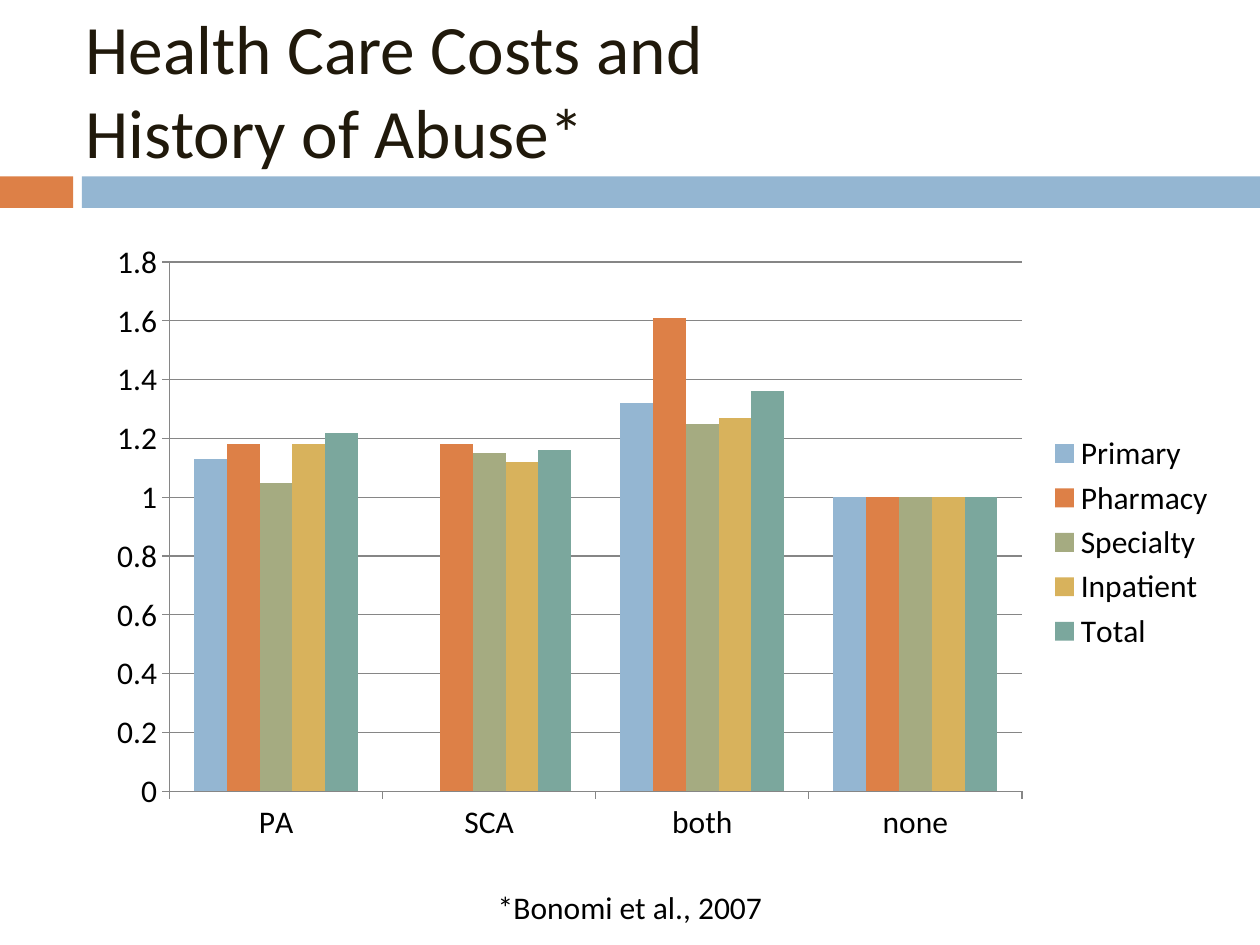
from pptx import Presentation
from pptx.chart.data import CategoryChartData
from pptx.dml.color import RGBColor
from pptx.enum.chart import XL_CHART_TYPE, XL_LEGEND_POSITION, XL_TICK_MARK
from pptx.enum.shapes import MSO_SHAPE
from pptx.enum.text import MSO_ANCHOR, PP_ALIGN
from pptx.util import Inches, Pt

COLUMN = XL_CHART_TYPE.COLUMN_CLUSTERED
RIGHT = XL_LEGEND_POSITION.RIGHT
OUT = XL_TICK_MARK.OUTSIDE
RECT = MSO_SHAPE.RECTANGLE
MIDDLE = MSO_ANCHOR.MIDDLE
CENTER = PP_ALIGN.CENTER

FONT = "Calibri"
BLUE, ORANGE, GRAY = "94B6D2", "DD8047", "868686"
GROUPS = ["PA", "SCA", "both", "none"]
COSTS = [
    ("Primary", BLUE, [1.13, None, 1.32, 1]),
    ("Pharmacy", ORANGE, [1.18, 1.18, 1.61, 1]),
    ("Specialty", "A5AB81", [1.05, 1.15, 1.25, 1]),
    ("Inpatient", "D8B25C", [1.18, 1.12, 1.27, 1]),
    ("Total", "7BA79D", [1.22, 1.16, 1.36, 1]),
]


def color(code):
    return RGBColor.from_string(code)


def box(*sides):
    return [Inches(side) for side in sides]


def apply(item, values):
    for name, value in values.items():
        setattr(item, name, value)


def style(font, size, code):
    apply(font, {"name": FONT, "size": Pt(size)})
    font.color.rgb = color(code)


def paint(item, code):
    item.fill.solid()
    item.fill.fore_color.rgb = color(code)


def add_bar(slide, left, width, code):
    bar = slide.shapes.add_shape(RECT, *box(left, 1.4, width, 0.25))
    bar.shadow.inherit = False
    paint(bar, code)
    bar.line.fill.background()


def set_title(slide, text):
    title = slide.shapes.title
    left, top, width, height = box(0.58, 0.08, 9.42, 1.25)
    apply(title, {"left": left, "top": top, "width": width, "height": height})
    frame = title.text_frame
    apply(frame, {"text": text, "vertical_anchor": MIDDLE, "word_wrap": True})
    line = frame.paragraphs[0]
    line.alignment = PP_ALIGN.LEFT
    for run in line.runs:
        style(run.font, 39.6, "20190B")


def add_costs(slide):
    data = CategoryChartData()
    data.categories = GROUPS
    for name, _, values in COSTS:
        data.add_series(name, values)
    chart = slide.shapes.add_chart(COLUMN, *box(0.75, 1.83, 9, 4.95), data).chart
    style(chart.font, 18, "000000")
    apply(chart, {"has_title": False, "has_legend": True})
    apply(chart.legend, {"position": RIGHT, "include_in_layout": False})

    # Columns
    plot = chart.plots[0]
    apply(plot, {"gap_width": 150, "overlap": 0, "vary_by_categories": False})
    for series, (_, code, _) in zip(plot.series, COSTS):
        paint(series.format, code)
        series.invert_if_negative = False

    # Axes and grid
    scale = chart.value_axis
    apply(scale, {"minimum_scale": 0, "maximum_scale": 1.8, "major_unit": 0.2,
                  "has_major_gridlines": True})
    apply(scale.tick_labels, {"number_format": "General",
                              "number_format_is_linked": False})
    for axis in (scale, chart.category_axis):
        axis.major_tick_mark = OUT
    for part in (scale, chart.category_axis, scale.major_gridlines):
        part.format.line.color.rgb = color(GRAY)
        part.format.line.width = Pt(0.75)


def add_note(slide, text):
    frame = slide.shapes.add_textbox(*box(2, 7, 6, 0.4)).text_frame
    apply(frame, {"text": text, "word_wrap": True})
    line = frame.paragraphs[0]
    line.alignment = CENTER
    style(line.runs[0].font, 18, "000000")


def main():
    deck = Presentation()
    apply(deck, {"slide_width": Inches(10), "slide_height": Inches(7.5)})
    slide = deck.slides.add_slide(deck.slide_layouts[5])

    # Title over a two-part band
    add_bar(slide, 0, 0.58, ORANGE)
    add_bar(slide, 0.65, 9.35, BLUE)
    set_title(slide, "Health Care Costs and \vHistory of Abuse*")

    # Chart with its source
    add_costs(slide)
    add_note(slide, "*Bonomi et al., 2007")
    deck.save("out.pptx")


if __name__ == "__main__":
    main()
